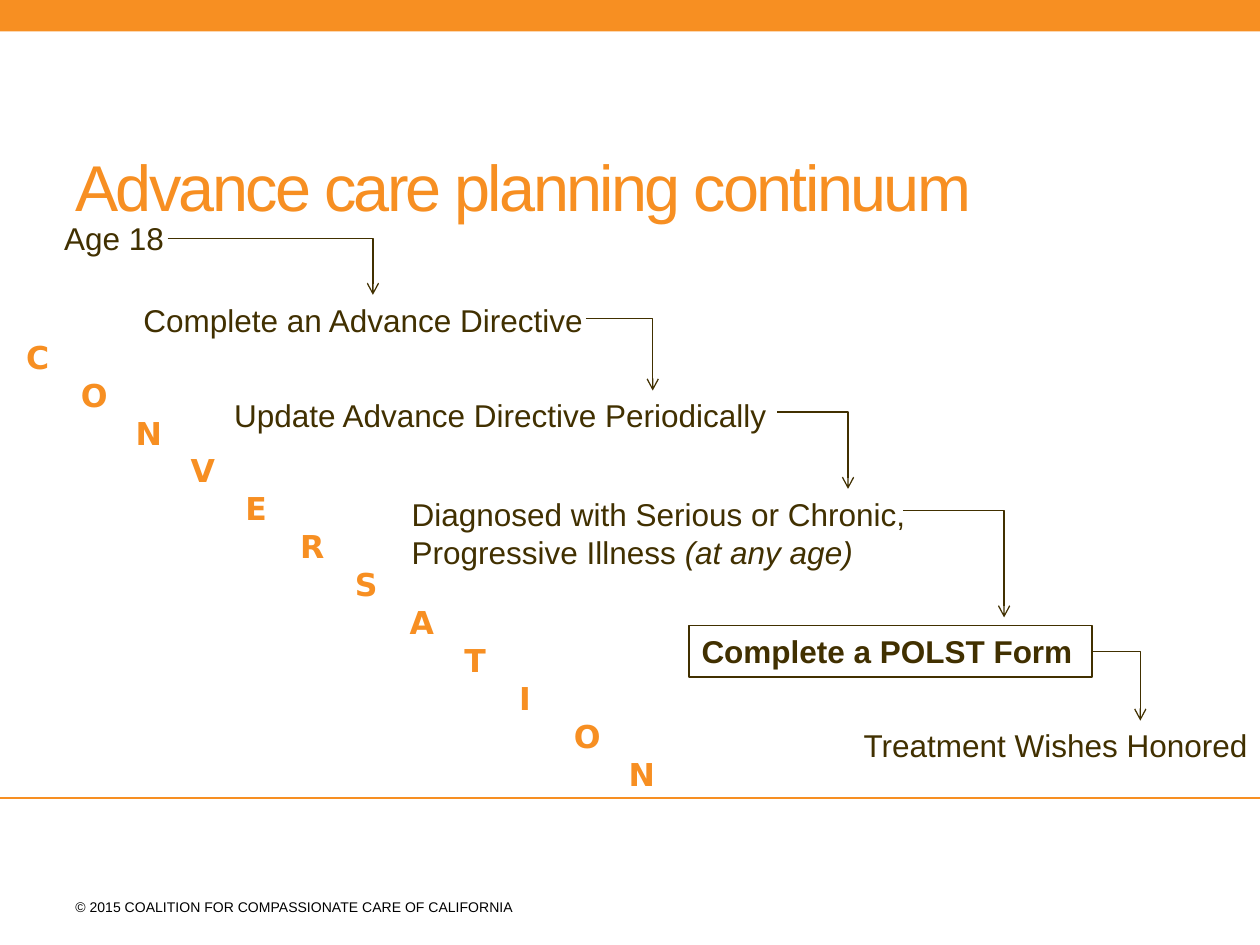
from lxml import etree
from pptx import Presentation
from pptx.dml.color import RGBColor
from pptx.enum.shapes import MSO_CONNECTOR as LINK, MSO_SHAPE as SHAPE
from pptx.enum.text import MSO_ANCHOR as ANCHOR, PP_ALIGN as ALIGN
from pptx.oxml.ns import qn
from pptx.util import Pt

ORANGE = RGBColor(0xF7, 0x8F, 0x22)
BROWN = RGBColor(0x41, 0x30, 0x00)
BLACK = RGBColor(0, 0, 0)

deck = Presentation()
deck.slide_width, deck.slide_height = Pt(720), Pt(540)
slide = deck.slides.add_slide(deck.slide_layouts[6])
shapes = slide.shapes


def add_text(text, left, top, width, height, size=18, color=BROWN):
    box = shapes.add_textbox(Pt(left), Pt(top), Pt(width), Pt(height))
    box.text_frame.word_wrap = True
    para = box.text_frame.paragraphs[0]
    para.text = text
    para.font.name, para.font.size = "Arial", Pt(size)
    para.font.color.rgb = color
    return box


def add_line(kind, x1, y1, x2, y2, color, width):
    line = shapes.add_connector(kind, Pt(x1), Pt(y1), Pt(x2), Pt(y2))
    line.line.color.rgb = color
    line.line.width = Pt(width)
    props = line._element.spPr
    etree.SubElement(props, qn("a:effectLst"))
    return props


# Frame of the page
bar = shapes.add_shape(SHAPE.RECTANGLE, 0, 0, Pt(720), Pt(18))
bar.shadow.inherit = False
bar.fill.solid()
bar.fill.fore_color.rgb = ORANGE
bar.line.fill.background()
add_line(LINK.STRAIGHT, 0, 456, 720, 456, ORANGE, 1)
add_text("© 2015 COALITION FOR COMPASSIONATE CARE OF CALIFORNIA",
         36, 509.8, 306, 17.3, 8, BLACK)

title = add_text("Advance care planning continuum",
                 36, 79.2, 642, 59, 37, ORANGE).text_frame
title.vertical_anchor = ANCHOR.MIDDLE
title.paragraphs[0].line_spacing = 0.9
title.paragraphs[0].runs[0].font._element.set("spc", "-150")

# Steps of the continuum
add_text("Age 18", 29.5, 121.7, 77.8, 29)
add_text("Complete an Advance Directive", 74.9, 168.5, 276.5, 29)
add_text("Update Advance Directive Periodically", 126.7, 222.5, 323.3, 29)
illness = add_text("Diagnosed with Serious or Chronic, Progressive Illness ",
                   228.2, 279.4, 342.7, 50.4)
age = illness.text_frame.paragraphs[0].add_run()
age.text = "(at any age)"
age.font.italic = True

form = add_text("Complete a POLST Form", 393.8, 357.3, 230.2, 29.5)
form.line.color.rgb = BROWN
form.line.width = Pt(0.75)
form.text_frame.vertical_anchor = ANCHOR.MIDDLE
form.text_frame.paragraphs[0].font.bold = True

wishes = add_text("Treatment Wishes Honored", 469.4, 411.1, 250.6, 29)
wishes.text_frame.paragraphs[0].alignment = ALIGN.RIGHT

# Arrows run right, then down to the next step
ARROWS = [
    (95.8, 136.1, 213.1, 168.5),
    (334.8, 182.2, 373, 223.2),
    (444.2, 235.4, 484.6, 279.4),
    (516.2, 291.6, 573.8, 352.8),
    (624.2, 372.2, 651.6, 411.8),
]
for ends in ARROWS:
    props = add_line(LINK.ELBOW, *ends, BROWN, 0.75)
    props.find(qn("a:prstGeom")).set("prst", "bentConnector2")
    etree.SubElement(props.find(qn("a:ln")), qn("a:tailEnd"), type="arrow")

# Diagonal word: each letter is indented one step more
STEP = 31.3
word = shapes.add_textbox(Pt(7.9), Pt(189.4), Pt(381.6), Pt(266.4)).text_frame
word.word_wrap = True
for i, letter in enumerate("CONVERSATION"):
    para = word.add_paragraph() if i else word.paragraphs[0]
    para.text = letter
    para._p.get_or_add_pPr().set("marL", str(Pt(i * STEP)))
    para.line_spacing = Pt(21.65)
    para.font.name, para.font.size = "DejaVu Sans", Pt(18)
    para.font.bold = True
    para.font.color.rgb = ORANGE

deck.save("out.pptx")
